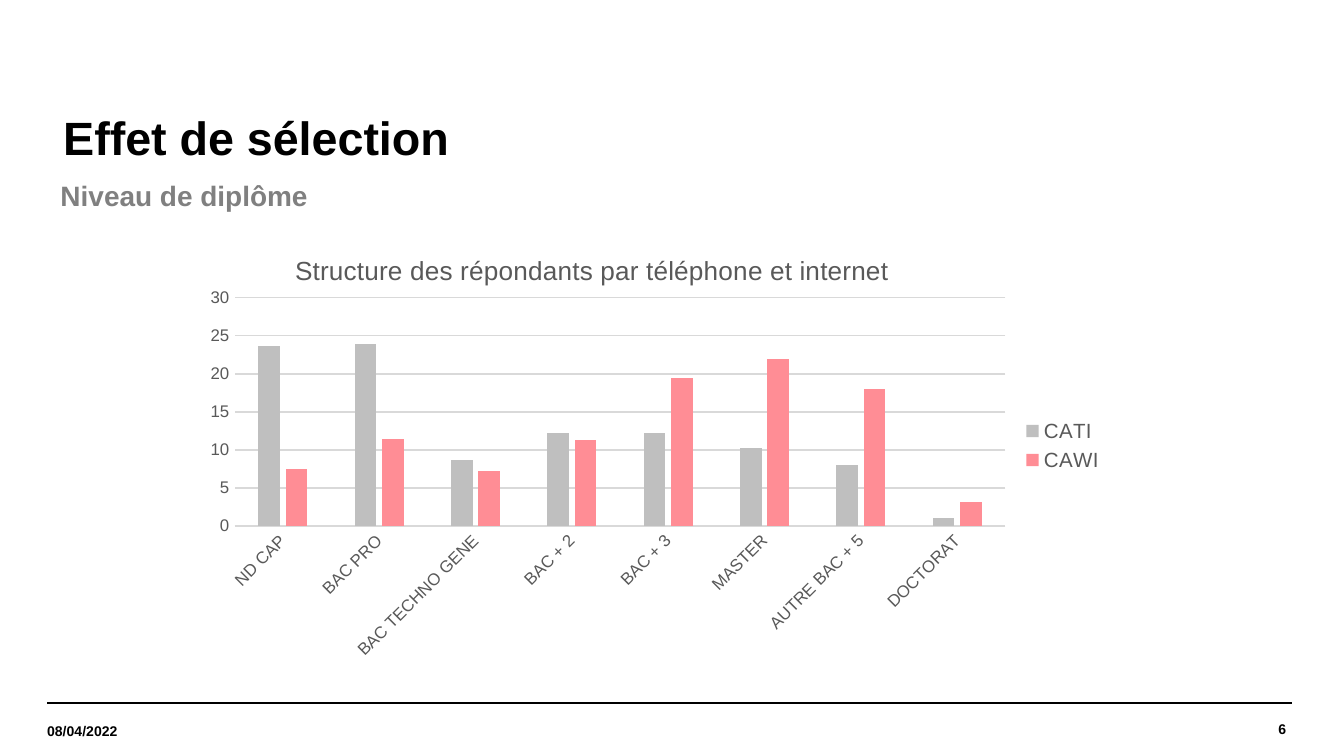
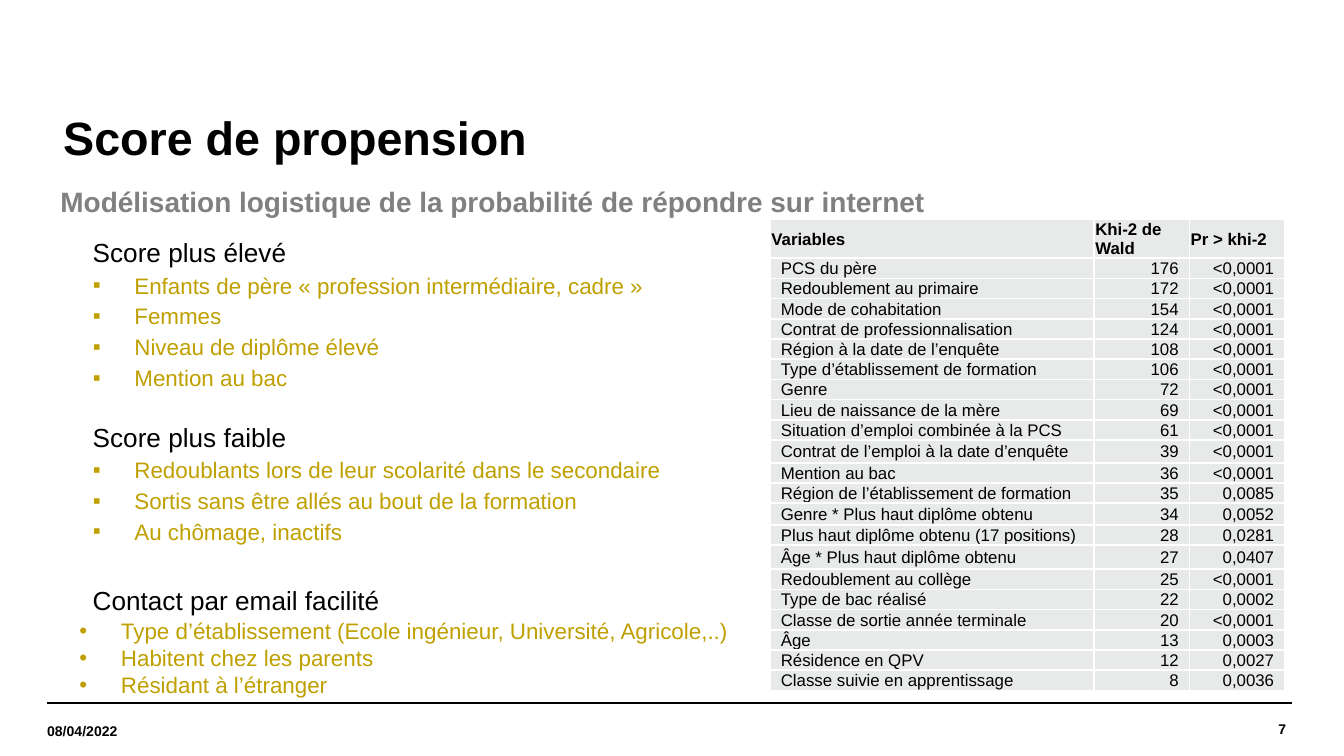
from lxml.etree import SubElement
from pptx import Presentation
from pptx.chart.data import CategoryChartData
from pptx.dml.color import RGBColor
from pptx.enum.chart import XL_CHART_TYPE, XL_LEGEND_POSITION, XL_TICK_MARK
from pptx.enum.shapes import MSO_CONNECTOR
from pptx.enum.text import MSO_ANCHOR, MSO_AUTO_SIZE, PP_ALIGN
from pptx.oxml.ns import qn
from pptx.util import Inches, Pt

# Shared style: the grid has 100 columns and 56.25 rows
UNIT = Inches(0.1)
WIDE, HIGH = 100, 56.25
FONT = "Arial"
BLACK, WHITE, GRAY, GOLD = "000000", "FFFFFF", "808080", "BFA000"
INK, RULE, PALE = "595959", "D9D9D9", "E7EAE9"
DATE = "08/04/2022"


def grid(*cells):
    return [round(cell * UNIT) for cell in cells]


def color(code):
    return RGBColor.from_string(code)


def style(font, size, code, bold=False):
    font.name, font.size, font.bold = FONT, Pt(size), bold
    font.color.rgb = color(code)


class Deck:
    def __init__(self):
        self.show = Presentation()
        self.show.slide_width, self.show.slide_height = grid(WIDE, HIGH)
        self.slide = None

    def say(self, para, text, size, code=BLACK, bold=False):
        run = para.add_run()
        run.text = text
        style(run.font, size, code, bold)

    def frame(self, shape, box, inset=0, anchor=MSO_ANCHOR.TOP):
        shape.left, shape.top, shape.width, shape.height = grid(*box)
        text = shape.text_frame
        text.word_wrap, text.auto_size = True, MSO_AUTO_SIZE.NONE
        text.vertical_anchor = anchor
        text.margin_left = text.margin_right = grid(inset)[0]
        text.margin_top = text.margin_bottom = grid(inset / 2)[0]
        return text

    def indent(self, para, left, first, mark=None):
        props = para._p.get_or_add_pPr()
        props.set("marL", str(Inches(left)))
        props.set("indent", str(Inches(first)))
        if mark:
            SubElement(props, qn("a:buFont"), typeface=FONT)
            SubElement(props, qn("a:buChar"), char=mark)
        else:
            SubElement(props, qn("a:buNone"))

    def page(self, number, title, lead, top, layout):
        self.slide = self.show.slides.add_slide(self.show.slide_layouts[layout])
        # Footer
        for start in (3.5, 3.9):
            self.line(start, 52.3, start + 92.2, 52.3)
        self.label((80.9, 52.3, 14.8, 3.9), str(number), PP_ALIGN.RIGHT)
        self.label((3.5, 52.5, 12.8, 3.8), DATE, PP_ALIGN.LEFT)
        # Title and lead line
        head = self.frame(self.slide.shapes.title, (3.5, 7.5, 92.1, 5.9),
                          1, MSO_ANCHOR.MIDDLE).paragraphs[0]
        self.indent(head, 0.02, 0)
        head.alignment, head.line_spacing = PP_ALIGN.LEFT, 0.9
        self.say(head, title, 25, bold=True)
        para = self.frame(self.slide.placeholders[1],
                          (3.5, top, 92.1, 2.7)).paragraphs[0]
        self.indent(para, 0.01, 0.09)
        para.space_before, para.space_after = Pt(0), Pt(8)
        self.say(para, lead, 15, GRAY, True)

    def line(self, *ends):
        rule = self.slide.shapes.add_connector(MSO_CONNECTOR.STRAIGHT, *grid(*ends))
        rule.line.color.rgb, rule.line.width = color(BLACK), Pt(0.8)
        SubElement(rule._element.spPr, qn("a:effectLst"))

    def label(self, box, text, align):
        shape = self.slide.shapes.add_textbox(*grid(*box))
        para = self.frame(shape, box, anchor=MSO_ANCHOR.MIDDLE).paragraphs[0]
        para.alignment = align
        self.say(para, text, 7.5, bold=True)

    def lists(self, box, groups):
        text = self.frame(self.slide.placeholders[2], box)
        text.margin_top = grid(1.1)[0]
        para = text.paragraphs[0]
        for group, (head, gap, mark, level, left, pad, items) in enumerate(groups):
            if group:
                para = text.add_paragraph()
            para.level = 2
            self.indent(para, 0.58, 0)
            para.space_before, para.space_after = Pt(gap), Pt(1)
            self.say(para, head, 14)
            for item in items:
                para = text.add_paragraph()
                para.level = level
                self.indent(para, left, -0.31, mark)
                para.space_before = para.space_after = Pt(pad)
                para.line_spacing = Pt(14.5)
                self.say(para, item, 12, GOLD)

    def place(self, node, spot, **share):
        for old in node.findall(qn("c:layout")):
            node.remove(old)
        layout = node.makeelement(qn("c:layout"))
        node.insert(spot, layout)
        manual = SubElement(layout, qn("c:manualLayout"))
        if "w" in share:
            SubElement(manual, qn("c:layoutTarget"), val="inner")
        for side in "xy":
            SubElement(manual, qn(f"c:{side}Mode"), val="edge")
        for key, value in share.items():
            SubElement(manual, qn(f"c:{key}"), val=str(value))

    def chart(self, box, title, names, series):
        data = CategoryChartData()
        data.categories = names
        for name, (values, _) in series.items():
            data.add_series(name, values)
        chart = self.slide.shapes.add_chart(
            XL_CHART_TYPE.COLUMN_CLUSTERED, *grid(*box), data).chart
        style(chart.font, 10, BLACK)
        # Bars
        plot = chart.plots[0]
        plot.gap_width, plot.overlap, plot.vary_by_categories = 219, -27, False
        for bars, (_, code) in zip(plot.series, series.values()):
            bars.format.fill.solid()
            bars.format.fill.fore_color.rgb = color(code)
        # Axes
        base, scale = chart.category_axis, chart.value_axis
        for axis in (base, scale):
            axis.major_tick_mark = axis.minor_tick_mark = XL_TICK_MARK.NONE
            style(axis.tick_labels.font, 9, INK)
        base._element.find(qn("c:txPr")).find(qn("a:bodyPr")).set("rot", "-2700000")
        scale.minimum_scale, scale.maximum_scale, scale.major_unit = 0, 30, 5
        scale.has_major_gridlines = True
        scale.format.line.fill.background()
        for part in (base, scale.major_gridlines):
            part.format.line.color.rgb = color(RULE)
            part.format.line.width = Pt(0.75)
        # Legend and title
        chart.has_legend = True
        chart.legend.position = XL_LEGEND_POSITION.RIGHT
        chart.legend.include_in_layout = False
        style(chart.legend.font, 11, INK)
        chart.has_title = True
        self.say(chart.chart_title.text_frame.paragraphs[0], title, 14, INK)
        self.place(chart.chart_title._element, 1, x=0.11, y=0.06)
        self.place(base._element.getparent(), 0, x=0.05, y=0.17, w=0.83, h=0.51)

    def table(self, box, widths, heads, rows, tall):
        table = self.slide.shapes.add_table(
            len(rows) + 1, len(heads), *grid(*box)).table
        table.first_row = table.horz_banding = False
        for column, width in zip(table.columns, widths):
            column.width = grid(width)[0]
        for r, texts in enumerate([heads, *rows]):
            table.rows[r].height = grid(tall.get(r, 1.3))[0]
            for c, text in enumerate(texts):
                self.cell(table.cell(r, c), text, r == 0, c)

    def cell(self, cell, text, head, c):
        cell.vertical_anchor = MSO_ANCHOR.MIDDLE
        sides = (0.1, 0.1) if head else (0.1, 0.8) if c else (0.8, 1.2)
        cell.margin_left, cell.margin_right = grid(*sides)
        cell.margin_top, cell.margin_bottom = grid(0.1, 0)
        para = cell.text_frame.paragraphs[0]
        if head and c == 1:
            para.alignment = PP_ALIGN.LEFT
        else:
            para.alignment = PP_ALIGN.RIGHT if c and not head else PP_ALIGN.JUSTIFY
        self.say(para, text, 9, bold=head)
        props = cell._tc.get_or_add_tcPr()
        for side in "LRTB":
            edge = SubElement(props, qn(f"a:ln{side}"), w=str(Pt(1)))
            fill = SubElement(edge, qn("a:solidFill"))
            SubElement(fill, qn("a:srgbClr"), val=WHITE)
        cell.fill.solid()
        cell.fill.fore_color.rgb = color(PALE)


def main():
    deck = Deck()

    # Selection effect
    deck.page(6, "Effet de sélection", "Niveau de diplôme", 13.3, 1)
    deck.chart(
        (14, 16.5, 69.1, 33.3),
        "Structure des répondants par téléphone et internet",
        ["ND CAP", "BAC PRO", "BAC TECHNO GENE", "BAC + 2", "BAC + 3",
         "MASTER", "AUTRE BAC + 5", "DOCTORAT"],
        {"CATI": ([23.7, 23.9, 8.7, 12.2, 12.2, 10.3, 8, 1.1], "BFBFBF"),
         "CAWI": ([7.5, 11.4, 7.2, 11.3, 19.4, 22, 18, 3.2], "FF8D95")})

    # Propensity score
    deck.page(7, "Score de propension",
              "Modélisation logistique de la probabilité de répondre sur internet",
              13.7, 3)
    deck.lists((1.1, 16.5, 92.1, 35.8), [
        ("Score plus élevé", 0, "▪", 2, 0.89, 1, [
            "Enfants de père « profession intermédiaire, cadre »", "Femmes",
            "Niveau de diplôme élevé", "Mention au bac"]),
        ("Score plus faible", 15, "▪", 2, 0.89, 1, [
            "Redoublants lors de leur scolarité dans le secondaire",
            "Sortis sans être allés au bout de la formation",
            "Au chômage, inactifs"]),
        ("Contact par email facilité", 20, "•", 1, 0.79, 0, [
            "Type d’établissement (Ecole ingénieur, Université, Agricole,..)",
            "Habitent chez les parents", "Résidant à l’étranger"])])
    low = "<0,0001"
    deck.table(
        (57.3, 16.3, 38.3, 30), (24.1, 7.1, 7.1),
        ("Variables", "Khi-2 de Wald", "Pr > khi-2"), [
            ("PCS du père", "176", low),
            ("Redoublement au primaire", "172", low),
            ("Mode de cohabitation", "154", low),
            ("Contrat de professionnalisation", "124", low),
            ("Région à la date de l’enquête", "108", low),
            ("Type d’établissement de formation", "106", low),
            ("Genre", "72", low),
            ("Lieu de naissance de la mère", "69", low),
            ("Situation d’emploi combinée à la PCS", "61", low),
            ("Contrat de l’emploi à la date d’enquête", "39", low),
            ("Mention au bac", "36", low),
            ("Région de l’établissement de formation", "35", "0,0085"),
            ("Genre * Plus haut diplôme obtenu", "34", "0,0052"),
            ("Plus haut diplôme obtenu (17 positions)", "28", "0,0281"),
            ("Âge * Plus haut diplôme obtenu", "27", "0,0407"),
            ("Redoublement au collège", "25", low),
            ("Type de bac réalisé", "22", "0,0002"),
            ("Classe de sortie année terminale", "20", low),
            ("Âge", "13", "0,0003"),
            ("Résidence en QPV", "12", "0,0027"),
            ("Classe suivie en apprentissage", "8", "0,0036")],
        {0: 2.5, 10: 1.7, 13: 1.6, 15: 1.8})

    deck.show.save("out.pptx")


if __name__ == "__main__":
    main()
